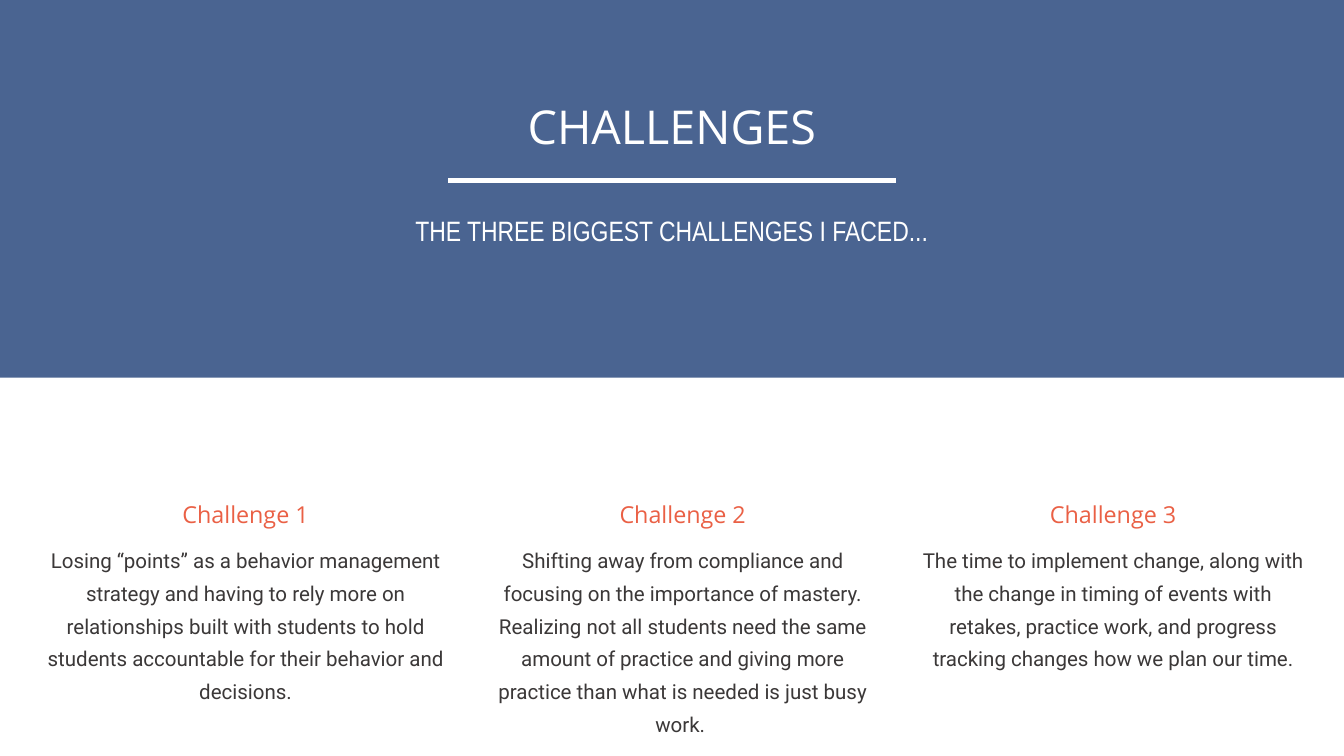
import pptx
import pptx.util
import pptx.dml.color
import pptx.enum.shapes
import pptx.enum.text
import lxml.etree

Inches = pptx.util.Inches
Pt = pptx.util.Pt

COLORS = {"band": "4A6491", "white": "FFFFFF", "head": "EA6045", "body": "3B3838"}
FONTS = {"title": "Open Sans", "sub": "Arial Narrow", "body": "Roboto"}


class Deck:
    """Holds the style and the current slide."""

    def __init__(self, slide):
        self.slide = slide
        self.shapes = slide.shapes

    def color(self, name):
        return pptx.dml.color.RGBColor.from_string(COLORS[name])

    def band(self, left, top, width, height, fill):
        box = self.shapes.add_shape(
            pptx.enum.shapes.MSO_SHAPE.RECTANGLE,
            Inches(left), Inches(top), Inches(width), Inches(height))
        box.shadow.inherit = False
        box.fill.solid()
        box.fill.fore_color.rgb = self.color(fill)
        box.line.fill.background()

    def rule(self, left, right, y, color, weight):
        line = self.shapes.add_connector(
            pptx.enum.shapes.MSO_CONNECTOR.STRAIGHT,
            Inches(left), Inches(y), Inches(right), Inches(y))
        line.line.color.rgb = self.color(color)
        line.line.width = Pt(weight)
        props = line._element.spPr
        lxml.etree.SubElement(props, pptx.oxml.ns.qn("a:effectLst"))

    def text(self, words, left, top, width, height, font, size, color, space):
        box = self.shapes.add_textbox(
            Inches(left), Inches(top), Inches(width), Inches(height))
        frame = box.text_frame
        frame.word_wrap = True
        frame.auto_size = pptx.enum.text.MSO_AUTO_SIZE.SHAPE_TO_FIT_TEXT
        frame.margin_left = frame.margin_right = 0
        frame.margin_top = frame.margin_bottom = 0
        para = frame.paragraphs[0]
        para.text = words
        para.alignment = pptx.enum.text.PP_ALIGN.CENTER
        para.line_spacing = Pt(space)
        para.font.name = FONTS[font]
        para.font.size = Pt(size)
        para.font.color.rgb = self.color(color)

    def column(self, head, body, left, width, height):
        self.text(body, left, 8.03, width, height, "body", 22, "body", 35.2)
        self.text(head, left, 7.45, width, 0.42, "title", 25, "head", 30)


# Left, width, body height, body text of each column
COLUMNS = [
    (0.64, 6.03, 2.41,
     "Losing “points” as a behavior management strategy and having to rely "
     "more on relationships built with students to hold students accountable "
     "for their behavior and decisions."),
    (7.26, 5.8, 2.9,
     "Shifting away from compliance and focusing on the importance of mastery. "
     "Realizing not all students need the same amount of practice and giving "
     "more practice than what is needed is just busy work. "),
    (13.65, 5.83, 1.92,
     "The time to implement change, along with the change in timing of events "
     "with retakes, practice work, and progress tracking changes how we plan "
     "our time."),
]


def main():
    show = pptx.Presentation()
    show.slide_width = Inches(20)
    show.slide_height = Inches(11.25)
    deck = Deck(show.slides.add_slide(show.slide_layouts[6]))

    # Top band with title, rule and subtitle
    deck.band(0, 0, 20, 5.62, "band")
    deck.rule(6.67, 13.33, 2.69, "white", 5.25)
    deck.text("CHALLENGES", 4.52, 1.52, 10.96, 0.79, "title", 50, "white", 55)
    deck.text("THE THREE BIGGEST CHALLENGES I FACED...",
              4.52, 3.22, 10.96, 0.47, "sub", 30, "white", 33)

    # Three challenge columns
    for num, (left, width, height, body) in enumerate(COLUMNS, 1):
        deck.column(f"Challenge {num}", body, left, width, height)

    show.save("out.pptx")


if __name__ == "__main__":
    main()
